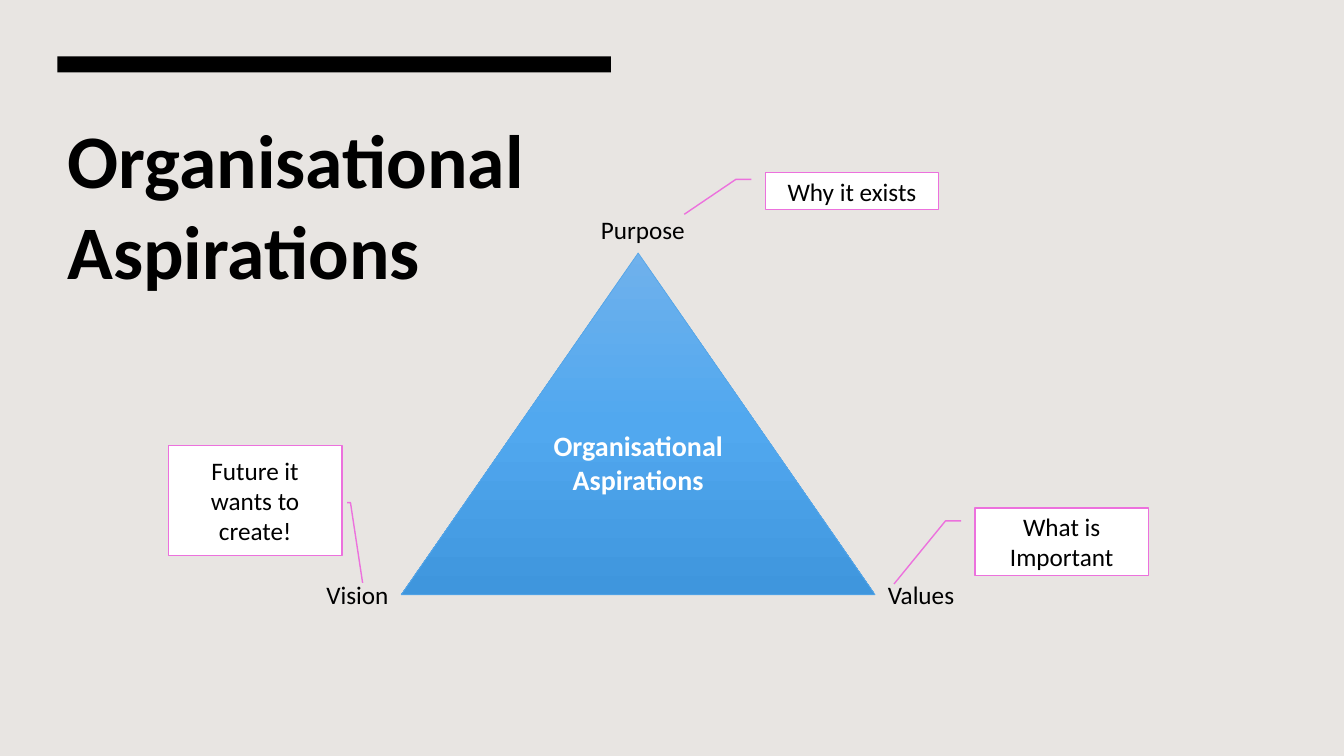
from copy import deepcopy
from dataclasses import dataclass

from pptx import Presentation
from pptx.dml.color import RGBColor
from pptx.enum.shapes import MSO_SHAPE
from pptx.enum.text import MSO_ANCHOR, MSO_AUTO_SIZE, PP_ALIGN
from pptx.oxml.ns import qn
from pptx.util import Inches, Pt


@dataclass(frozen=True)
class Theme:
    font: str = "Calibri"
    background: str = "E8E5E2"
    ink: str = "000000"
    paper: str = "FFFFFF"
    callout_line: str = "EC71DD"
    triangle_line: str = "58A7E8"
    triangle_stops: tuple = ((0, "6FB1EC"), (0.5, "51A8EF"), (1, "3F96DD"))
    title_size: int = 54
    centre_size: int = 20
    label_size: int = 18


theme = Theme()


def write(shape, text, size, colour=theme.ink, bold=False,
          align=PP_ALIGN.CENTER, anchor=MSO_ANCHOR.TOP):
    """Fill a shape with one formatted paragraph."""
    frame = shape.text_frame
    frame.text = text
    frame.word_wrap = True
    frame.auto_size = MSO_AUTO_SIZE.NONE
    frame.vertical_anchor = anchor
    para = frame.paragraphs[0]
    para.alignment = align
    font = para.runs[0].font
    font.name, font.size, font.bold = theme.font, Pt(size), bold
    font.color.rgb = RGBColor.from_string(colour)


def add_outlined(kind, place, line_colour, line_width):
    """Add a shadowless preset shape; place is left, top, width, height in inches."""
    shape = page.shapes.add_shape(kind, *map(Inches, place))
    shape.shadow.inherit = False
    shape.line.color.rgb = RGBColor.from_string(line_colour)
    shape.line.width = Pt(line_width)
    return shape


deck = Presentation()
deck.slide_width, deck.slide_height = Inches(13.33), Inches(7.5)
page = deck.slides.add_slide(deck.slide_layouts[5])
page.background.fill.solid()
page.background.fill.fore_color.rgb = RGBColor.from_string(theme.background)

# Title under its bar, sharing one column
column_left, column_width = 0.57, 5.49
title = page.shapes.title
title.left, title.top = Inches(column_left), Inches(1.07)
title.width, title.height = Inches(column_width), Inches(5.33)
write(title, "Organisational Aspirations", theme.title_size, bold=True,
      align=PP_ALIGN.LEFT)

bar = add_outlined(MSO_SHAPE.RECTANGLE, (column_left, 0.56, column_width, 0.16),
                   theme.ink, 0)
bar.line.fill.background()
bar.fill.solid()
bar.fill.fore_color.rgb = RGBColor.from_string(theme.ink)

# Triangle with a three-stop vertical gradient
triangle = add_outlined(MSO_SHAPE.ISOSCELES_TRIANGLE, (3.98, 2.51, 4.7, 3.39),
                        theme.triangle_line, 0.5)
triangle.fill.gradient()
triangle.fill.gradient_angle = 270
stop_list = triangle.element.spPr.find(".//" + qn("a:gsLst"))
stop_list.append(deepcopy(stop_list[0]))
for stop, (position, colour) in zip(triangle.fill.gradient_stops, theme.triangle_stops):
    stop.position = position
    stop.color.rgb = RGBColor.from_string(colour)
write(triangle, "Organisational Aspirations", theme.centre_size, theme.paper, bold=True)

# Corner labels: text, left, top, width
label_height = 0.4
for text, left, top, width in (
    ("Purpose", 5.27, 2.08, 2.21),
    ("Values", 8.45, 5.7, 1.37),
    ("Vision", 2.8, 5.7, 1.49),
):
    label = page.shapes.add_textbox(*map(Inches, (left, top, width, label_height)))
    write(label, text, theme.label_size)

# Callouts: text, left, top, height, leader points as (y, x) shares of the box
callout_width = 1.72
leader_down_left = (0.19, -0.08, 0.19, -0.17, 1.125, -0.467)
leader_down_right = (0.52, 1.03, 0.52, 1.05, 1.25, 1.12)
for text, left, top, height, leader in (
    ("Why it exists", 7.59, 1.71, 0.37, leader_down_left),
    ("Future it wants to create!", 1.67, 4.42, 1.09, leader_down_right),
    ("What is Important", 9.67, 5.04, 0.67, leader_down_left),
):
    callout = add_outlined(MSO_SHAPE.LINE_CALLOUT_2, (left, top, callout_width, height),
                           theme.callout_line, 1)
    callout.fill.solid()
    callout.fill.fore_color.rgb = RGBColor.from_string(theme.paper)
    for index, share in enumerate(leader):
        callout.adjustments[index] = share
    write(callout, text, theme.label_size, anchor=MSO_ANCHOR.MIDDLE)

deck.save("out.pptx")
